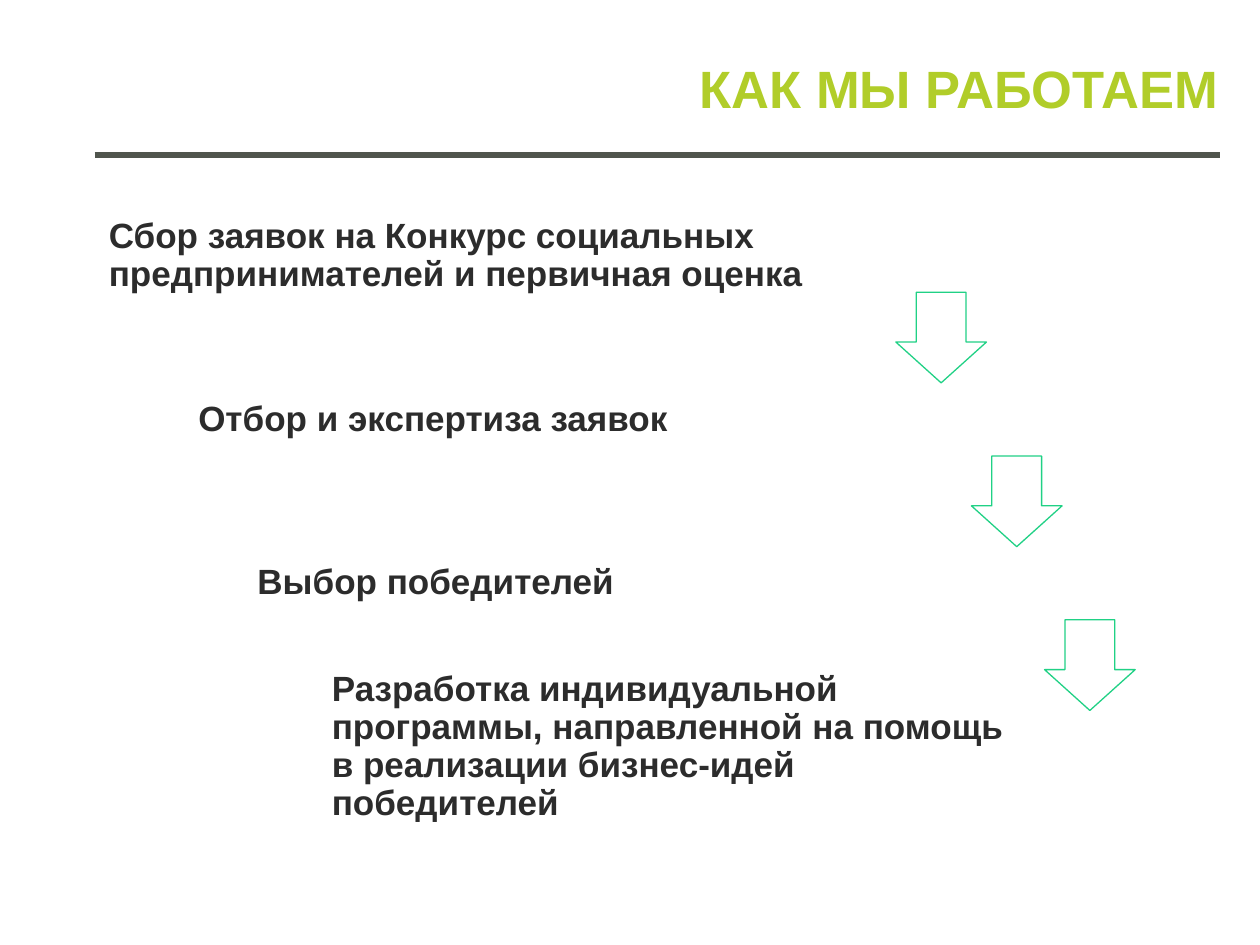
from typing import NamedTuple

from lxml.etree import SubElement
from pptx import Presentation
from pptx.dml.color import RGBColor
from pptx.enum.shapes import MSO_CONNECTOR, MSO_SHAPE
from pptx.enum.text import MSO_ANCHOR as Anchor, MSO_AUTO_SIZE as AutoSize, PP_ALIGN as Align
from pptx.oxml.ns import qn
from pptx.util import Pt

FONT = "Arial"
GREEN, GRAY, DARK, WHITE, MINT = "B1CD29", "50554D", "2C2C2C", "FFFFFF", "08CC78"
STEP_TOP, STEP_HEIGHT, STEP_PITCH = 108.8, 74.9, 93.6
ARROW_TOP, ARROW_SIZE = 167, 51.8
OPACITY = "90000"


class Step(NamedTuple):
    text: str
    left: float
    width: float


STEPS = [
    Step("Сбор заявок на Конкурс социальных предпринимателей и первичная оценка", 56.2, 417.6),
    Step("Отбор и экспертиза заявок", 107.3, 397.4),
    Step("Выбор победителей", 141.1, 411.8),
    Step("Разработка индивидуальной программы, направленной на помощь "
         "в реализации бизнес-идей победителей", 183.6, 411.1),
]
ARROW_LEFTS = [511.9, 555.1, 596.9]


def color(value: str) -> RGBColor:
    return RGBColor.from_string(value)


def write(box, text: str, *, size: float, fill: str, align=Align.LEFT,
          anchor=Anchor.TOP, spacing: float = 0.9, inset=None) -> None:
    frame = box.text_frame
    frame.word_wrap = True
    frame.auto_size = AutoSize.NONE
    frame.vertical_anchor = anchor
    if inset is not None:
        frame.margin_left = frame.margin_right = Pt(inset)
        frame.margin_top = frame.margin_bottom = Pt(inset)
    para = frame.paragraphs[0]
    para.alignment = align
    para.line_spacing = spacing
    span = para.add_run()
    span.text = text
    span.font.name = FONT
    span.font.size = Pt(size)
    span.font.bold = True
    span.font.color.rgb = color(fill)


def add_title(page, text: str) -> None:
    title = page.shapes.title
    title.left, title.top, title.width, title.height = Pt(59.8), Pt(31.7), Pt(643.7), Pt(41.8)
    write(title, text, size=30, fill=GREEN, align=Align.RIGHT, spacing=0.93)


def add_rule(page) -> None:
    rule = page.shapes.add_connector(MSO_CONNECTOR.STRAIGHT, Pt(54), Pt(88.6), Pt(697), Pt(88.6))
    rule.line.color.rgb = color(GRAY)
    rule.line.width = Pt(3)
    SubElement(rule._element.spPr, qn("a:effectLst"))


def add_step(page, step: Step, row: int) -> None:
    box = page.shapes.add_textbox(Pt(step.left), Pt(STEP_TOP + row * STEP_PITCH),
                                  Pt(step.width), Pt(STEP_HEIGHT))
    write(box, step.text, size=20, fill=DARK, anchor=Anchor.MIDDLE, inset=6)


def add_arrow(page, left: float, row: int) -> None:
    arrow = page.shapes.add_shape(MSO_SHAPE.DOWN_ARROW, Pt(left), Pt(ARROW_TOP + row * STEP_PITCH),
                                  Pt(ARROW_SIZE), Pt(ARROW_SIZE))
    arrow.adjustments[0], arrow.adjustments[1] = 0.55, 0.45
    arrow.shadow.inherit = False
    arrow.fill.solid()
    arrow.fill.fore_color.rgb = color(WHITE)
    arrow.line.color.rgb = color(MINT)
    arrow.line.width = Pt(0.75)
    for tone in arrow._element.spPr.iter(qn("a:srgbClr")):
        SubElement(tone, qn("a:alpha"), val=OPACITY)


def main() -> None:
    deck = Presentation()
    deck.slide_width, deck.slide_height = Pt(720), Pt(540)
    title_only = deck.slide_layouts[5]
    page = deck.slides.add_slide(title_only)
    add_title(page, "КАК МЫ РАБОТАЕМ")
    add_rule(page)
    for row, step in enumerate(STEPS):
        add_step(page, step, row)
    for row, left in enumerate(ARROW_LEFTS):
        add_arrow(page, left, row)
    deck.save("out.pptx")


if __name__ == "__main__":
    main()
